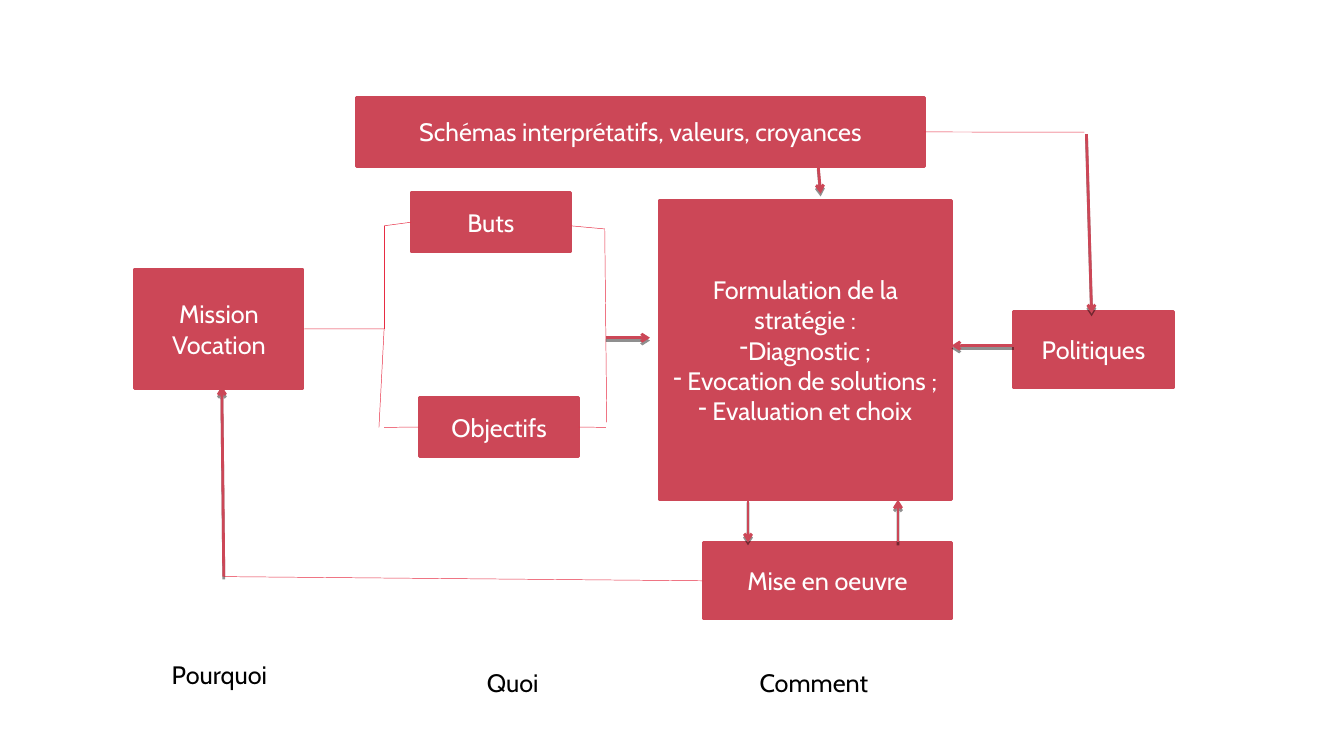
from lxml import etree
from pptx import Presentation
from pptx import util as u
from pptx.dml.color import RGBColor
from pptx.enum import shapes, text
from pptx.oxml.ns import qn

RED = RGBColor(0xCC, 0x47, 0x57)
THIN_RED = RGBColor(0xE7, 0x2C, 0x43)
WHITE = RGBColor(0xFF, 0xFF, 0xFF)
BLACK = RGBColor(0, 0, 0)
TOP, LEFT, BOTTOM, RIGHT = range(4)

deck = Presentation()
deck.slide_width, deck.slide_height = u.Cm(33.87), u.Cm(19.05)
page = deck.slides.add_slide(deck.slide_layouts[6])


def write(box, lines, color):
    """Fill a box with centred lines; a leading dash becomes a bullet."""
    frame = box.text_frame
    frame.word_wrap = True
    for number, line in enumerate(lines):
        para = frame.paragraphs[0] if number == 0 else frame.add_paragraph()
        para.alignment = text.PP_ALIGN.CENTER
        if line.startswith("-"):
            settings = para._p.get_or_add_pPr()
            settings.set("marL", "0")
            settings.set("indent", "0")
            etree.SubElement(settings, qn("a:buChar"), char="-")
        span = para.add_run()
        span.text = line.removeprefix("-")
        span.font.name = "Cabin"
        span.font.size = u.Pt(18)
        span.font.color.rgb = color


def connect(start, end, arrow=False):
    """Draw a line between points in cm or (box, side) pairs."""
    points = [(0, 0) if isinstance(p[0], str) else p for p in (start, end)]
    line = page.shapes.add_connector(
        shapes.MSO_CONNECTOR.STRAIGHT, *[u.Cm(v) for p in points for v in p])
    if isinstance(start[0], str):
        line.begin_connect(boxes[start[0]], start[1])
    if isinstance(end[0], str):
        line.end_connect(boxes[end[0]], end[1])
    line.line.color.rgb = RED if arrow else THIN_RED
    line.line.width = u.Pt(2 if arrow else 0.35)
    effects = etree.SubElement(line._element.spPr, qn("a:effectLst"))
    if arrow:
        etree.SubElement(line.line._ln, qn("a:tailEnd"), type="arrow")
        shadow = etree.SubElement(effects, qn("a:outerShdw"), blurRad="0",
                                  dist=str(u.Pt(2)), dir="5400000", rotWithShape="0")
        black = etree.SubElement(shadow, qn("a:srgbClr"), val="000000")
        etree.SubElement(black, qn("a:alpha"), val="43000")


# Boxes: left, top, width, height in cm
boxes = {}
for name, area, lines in [
    ("mission", (3.4, 6.78, 4.24, 3.02), ["Mission", "Vocation"]),
    ("objectifs", (10.57, 10.01, 4.02, 1.5), ["Objectifs"]),
    ("buts", (10.36, 4.85, 4.02, 1.5), ["Buts"]),
    ("formulation", (16.61, 5.05, 7.37, 7.54),
     ["Formulation de la stratégie :", "-Diagnostic ;",
      "- Evocation de solutions ;", "- Evaluation et choix"]),
    ("politiques", (25.55, 7.85, 4.02, 1.93), ["Politiques"]),
    ("schemas", (8.99, 2.46, 14.3, 1.73),
     ["Schémas interprétatifs, valeurs, croyances"]),
    ("mise", (17.73, 13.67, 6.25, 1.93), ["Mise en oeuvre"]),
]:
    box = page.shapes.add_shape(shapes.MSO_SHAPE.RECTANGLE, *map(u.Cm, area))
    box.shadow.inherit = False
    box.fill.solid()
    box.fill.fore_color.rgb = RED
    box.line.color.rgb = RED
    box.line.width = u.Pt(2)
    box.text_frame.vertical_anchor = text.MSO_ANCHOR.MIDDLE
    write(box, lines, WHITE)
    boxes[name] = box

# Thin lines: brackets around the goals, then the two long links
fork = (9.68, 8.29)
for start, end in [
    (("mission", RIGHT), fork),
    (fork, (9.68, 5.69)),
    (fork, (9.55, 10.77)),
    ((9.68, 5.69), ("buts", LEFT)),
    ((9.68, 10.77), ("objectifs", LEFT)),
    ((14.38, 5.69), (15.24, 5.77)),
    ((15.24, 5.77), (15.29, 10.64)),
    ((15.27, 10.77), ("objectifs", RIGHT)),
    (("schemas", RIGHT), (27.33, 3.33)),
    (("mise", LEFT), (5.64, 14.53)),
]:
    connect(start, end)

# Arrows
for start, end in [
    ((15.27, 8.51), (16.38, 8.51)),
    ((25.55, 8.71), (23.98, 8.71)),
    ((27.38, 3.38), (27.51, 7.9)),
    ((20.62, 4.19), (20.68, 4.88)),
    ((18.85, 12.59), (18.85, 13.67)),
    ((22.63, 13.67), (22.63, 12.59)),
    ((5.64, 14.53), (5.59, 9.73)),
]:
    connect(start, end, arrow=True)

# Questions along the bottom
for question, left, top in [("Pourquoi", 3.18, 16.48), ("Quoi", 10.57, 16.69),
                            ("Comment", 18.16, 16.69)]:
    label = page.shapes.add_textbox(u.Cm(left), u.Cm(top), u.Cm(4.7), u.Cm(1.02))
    write(label, [question], BLACK)
    label.text_frame.auto_size = text.MSO_AUTO_SIZE.SHAPE_TO_FIT_TEXT

deck.save("out.pptx")
